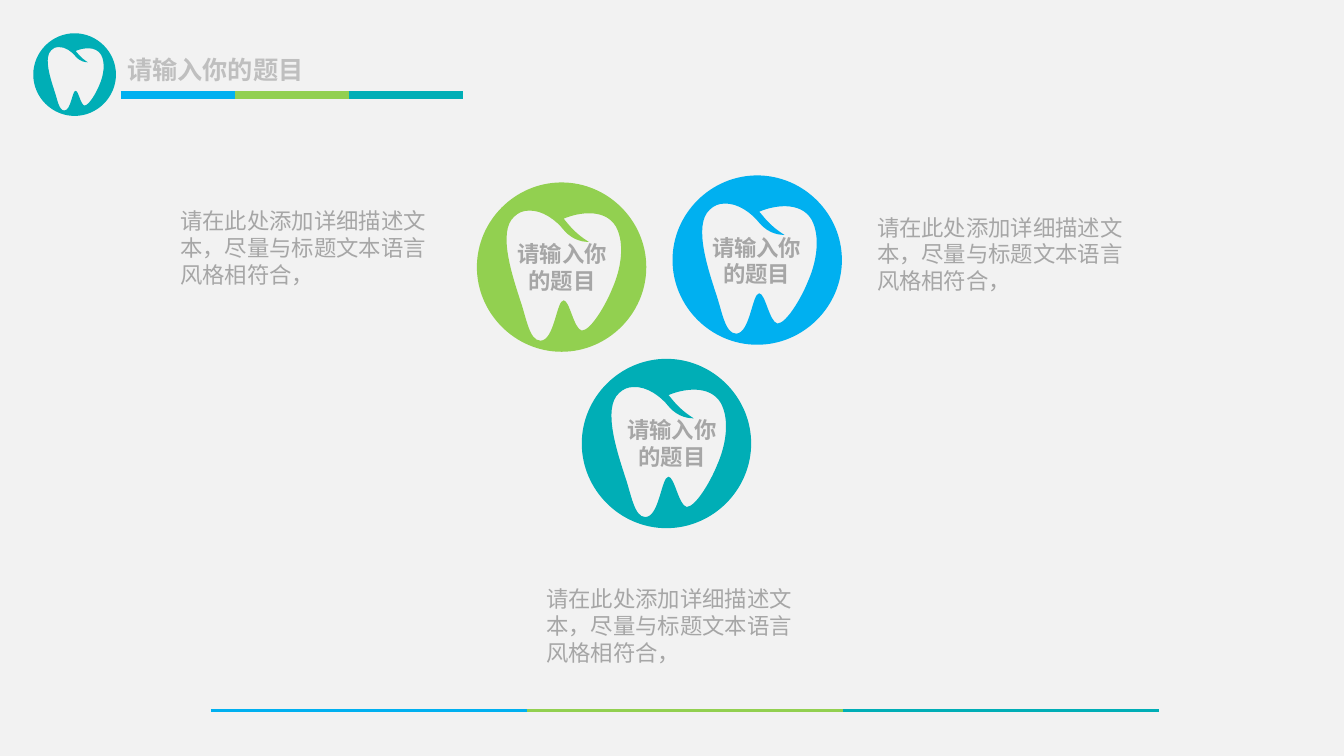
from lxml import etree
from pptx import Presentation
from pptx.dml.color import RGBColor
from pptx.enum.shapes import MSO_CONNECTOR, MSO_SHAPE
from pptx.enum.text import MSO_AUTO_SIZE, PP_ALIGN
from pptx.oxml.ns import qn
from pptx.util import Inches, Pt

STRAIGHT = MSO_CONNECTOR.STRAIGHT
RECTANGLE = MSO_SHAPE.RECTANGLE
GROW = MSO_AUTO_SIZE.SHAPE_TO_FIT_TEXT
LEFT, CENTER = PP_ALIGN.LEFT, PP_ALIGN.CENTER

FONT = "Noto Sans CJK SC"
COLORS = {
    "background": "F2F2F2",
    "blue": "00B0F0",
    "green": "92D050",
    "teal": "00AEB6",
    "title": "BFBFBF",
    "body": "A6A6A6",
}
STRIPE_COLORS = ("blue", "green", "teal")
TITLE = "请输入你的题目"
DESCRIPTION = "请在此处添加详细描述文本，尽量与标题文本语言风格相符合，"
SLIDE_WIDTH, SLIDE_HEIGHT = Inches(13.33), Inches(7.5)

# Outlines in inches inside a badge of BADGE_SIZE: a start point,
# then three points (two controls and an end) for each cubic curve
BADGE_SIZE = 1.68
TOOTH = [
    (0.51, 0.28),
    (0.46, 0.28), (0.41, 0.30), (0.37, 0.34),
    (0.20, 0.49), (0.36, 0.95), (0.43, 1.17),
    (0.49, 1.34), (0.52, 1.57), (0.63, 1.57),
    (0.77, 1.57), (0.79, 1.17), (0.86, 1.17),
    (0.92, 1.17), (0.96, 1.45), (1.04, 1.47),
    (1.13, 1.47), (1.28, 1.21), (1.34, 1.06),
    (1.43, 0.86), (1.47, 0.61), (1.38, 0.44),
    (1.27, 0.25), (1.00, 0.30), (0.86, 0.36),
    (0.90, 0.40), (0.95, 0.49), (1.11, 0.59),
    (1.08, 0.59), (0.96, 0.59), (0.86, 0.47),
    (0.79, 0.38), (0.65, 0.27), (0.51, 0.28),
]
CIRCLE = [
    (0.84, 0),
    (1.30, 0), (1.68, 0.38), (1.68, 0.84),
    (1.68, 1.30), (1.30, 1.68), (0.84, 1.68),
    (0.38, 1.68), (0, 1.30), (0, 0.84),
    (0, 0.38), (0.38, 0), (0.84, 0),
]


def color(name):
    return RGBColor.from_string(COLORS[name])


def paint(shape, name):
    shape.shadow.inherit = False
    shape.fill.solid()
    shape.fill.fore_color.rgb = color(name)
    shape.line.fill.background()


def write_text(frame, text, size=16, ink="body", bold=False, align=LEFT):
    paragraph = frame.paragraphs[0]
    paragraph.alignment = align
    run = paragraph.add_run()
    run.text = text
    run.font.size = Pt(size)
    run.font.bold = bold
    run.font.name = FONT
    run.font.color.rgb = color(ink)
    etree.SubElement(run.font._element, qn("a:ea"), typeface=FONT)


def curve_segments(shape):
    """Turn every three line segments into one cubic curve."""
    segments = list(shape._element.iter(qn("a:lnTo")))
    for index in range(0, len(segments), 3):
        curve = etree.Element(qn("a:cubicBezTo"))
        segments[index].addprevious(curve)
        for segment in segments[index:index + 3]:
            curve.append(segment[0])
            segment.getparent().remove(segment)


class SlideBuilder:
    def __init__(self, slide):
        self.slide = slide

    def group(self):
        return self.slide.shapes.add_group_shape().shapes

    def backdrop(self):
        panel = self.slide.shapes.add_shape(RECTANGLE, 0, 0, SLIDE_WIDTH, SLIDE_HEIGHT)
        paint(panel, "background")

    def stripe(self, left, top, segment, width):
        """Draw a line of three coloured segments."""
        shapes = self.group()
        for index, name in enumerate(STRIPE_COLORS):
            start = left + index * segment
            line = shapes.add_connector(STRAIGHT, Inches(start), Inches(top),
                                        Inches(start + segment), Inches(top))
            line.line.color.rgb = color(name)
            line.line.width = Pt(width)
            etree.SubElement(line._element.spPr, qn("a:effectLst"))

    def badge(self, shapes, left, top, size, name):
        """Draw a disc with a tooth cut out of it."""
        scale = size / BADGE_SIZE
        tooth, circle = (
            [(Inches(left + x * scale), Inches(top + y * scale)) for x, y in outline]
            for outline in (TOOTH, CIRCLE))
        builder = shapes.build_freeform(*tooth[0])
        builder.add_line_segments(tooth[1:], close=True)
        builder.move_to(*circle[0])
        builder.add_line_segments(circle[1:], close=True)
        disc = builder.convert_to_shape()
        curve_segments(disc)
        paint(disc, name)

    def text(self, shapes, left, top, width, height, text, wrap=True, **style):
        box = shapes.add_textbox(Inches(left), Inches(top), Inches(width), Inches(height))
        box.text_frame.word_wrap = wrap
        box.text_frame.auto_size = GROW
        write_text(box.text_frame, text, **style)

    def topic(self, badge_at, label_at, name):
        shapes = self.group()
        self.badge(shapes, *badge_at, BADGE_SIZE, name)
        self.text(shapes, *label_at, 1.15, 0.64, TITLE, bold=True, align=CENTER)


def main():
    presentation = Presentation()
    presentation.slide_width = SLIDE_WIDTH
    presentation.slide_height = SLIDE_HEIGHT
    slide = presentation.slides.add_slide(presentation.slide_layouts[6])
    builder = SlideBuilder(slide)

    # Backdrop, footer and header
    builder.backdrop()
    builder.stripe(2.09, 7.05, 3.135, 2.25)
    builder.stripe(1.2, 0.94, 1.13, 6)
    builder.badge(slide.shapes, 0.33, 0.33, 0.82, "teal")
    builder.text(slide.shapes, 1.15, 0.49, 1.97, 0.4, TITLE, wrap=False,
                 size=18, ink="title", bold=True, align=CENTER)

    # Topics
    builder.topic((6.67, 1.74), (6.93, 2.27), "blue")
    builder.topic((4.73, 1.81), (5, 2.33), "green")
    builder.topic((5.77, 3.56), (6.09, 4.08), "teal")

    # Descriptions
    for left, top in ((8.6, 2.07), (1.69, 2.01), (5.32, 5.76)):
        builder.text(slide.shapes, left, top, 2.78, 0.91, DESCRIPTION)

    presentation.save("out.pptx")


if __name__ == "__main__":
    main()
